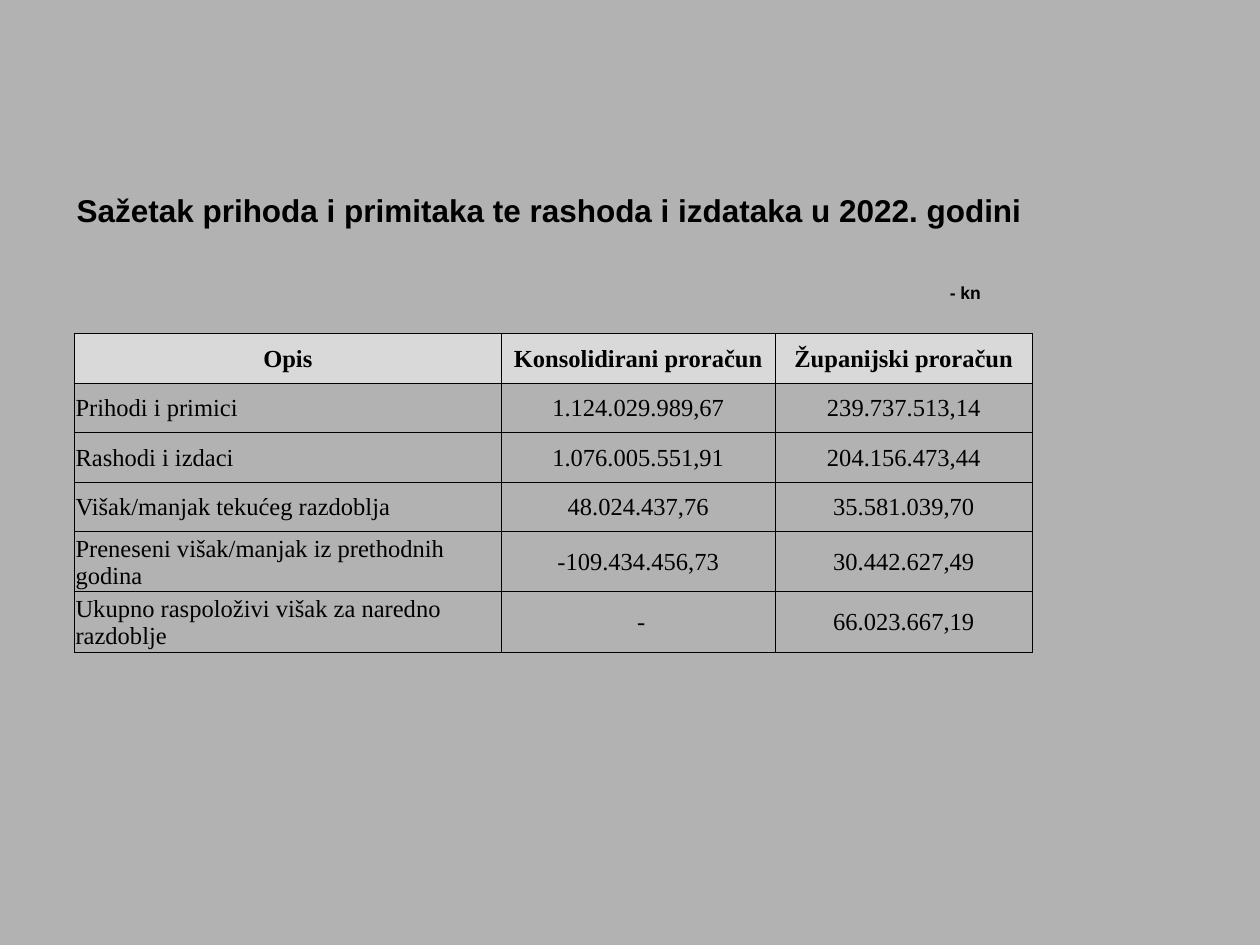
from lxml import etree
from pptx import Presentation
from pptx.dml.color import RGBColor
from pptx.enum.text import MSO_ANCHOR, PP_ALIGN
from pptx.oxml.ns import qn
from pptx.util import Pt

GREY = RGBColor(0xB2, 0xB2, 0xB2)
HEADER_GREY = RGBColor(0xD9, 0xD9, 0xD9)
BLACK = RGBColor(0, 0, 0)

BUDGET_ROWS = [
    ("Opis", "Konsolidirani proračun", "Županijski proračun"),
    ("Prihodi i primici", "1.124.029.989,67", "239.737.513,14"),
    ("Rashodi i izdaci", "1.076.005.551,91", "204.156.473,44"),
    ("Višak/manjak tekućeg razdoblja", "48.024.437,76", "35.581.039,70"),
    ("Preneseni višak/manjak iz prethodnih godina", "-109.434.456,73", "30.442.627,49"),
    ("Ukupno raspoloživi višak za naredno razdoblje", "\N{NO-BREAK SPACE}-", "66.023.667,19"),
]
COLUMN_WIDTHS = [244, 156.5, 147]
ROW_HEIGHTS = [28.35] * 4 + [34.3] * 2
CELL_FORMAT = {
    "margin_left": Pt(0.7),
    "margin_right": Pt(0.7),
    "margin_top": Pt(0.7),
    "margin_bottom": 0,
    "vertical_anchor": MSO_ANCHOR.MIDDLE,
}


def write(paragraph, text, **font_format):
    run = paragraph.add_run()
    run.text = text
    run.font.color.rgb = BLACK
    for attribute, value in font_format.items():
        setattr(run.font, attribute, value)


def add_borders(cell):
    """Put a thin black line on all four sides, ahead of the cell's fill."""
    properties = cell._tc.get_or_add_tcPr()
    for position, side in enumerate(("lnL", "lnR", "lnT", "lnB")):
        line = etree.Element(qn(f"a:{side}"), w=str(Pt(0.5)))
        fill = etree.SubElement(line, qn("a:solidFill"))
        etree.SubElement(fill, qn("a:srgbClr"), val=str(BLACK))
        properties.insert(position, line)


presentation = Presentation()
presentation.slide_width = Pt(720)
presentation.slide_height = Pt(540)
slide = presentation.slides.add_slide(presentation.slide_layouts[6])
slide.background.fill.solid()
slide.background.fill.fore_color.rgb = GREY

# Heading and currency unit
for text, size, bounds in [
    ("Sažetak prihoda i primitaka te rashoda i izdataka u 2022. godini", 18,
     (36.7, 105.8, 623.5, 39.6)),
    ("- kn", 10, (535.7, 157.7, 68.4, 17.3)),
]:
    frame = slide.shapes.add_textbox(*map(Pt, bounds)).text_frame
    frame.word_wrap = True
    write(frame.paragraphs[0], text, name="Arial", size=Pt(size), bold=True)

# Budget summary
budget = slide.shapes.add_table(
    len(BUDGET_ROWS), len(COLUMN_WIDTHS), Pt(42.5), Pt(190.5),
    Pt(sum(COLUMN_WIDTHS)), Pt(sum(ROW_HEIGHTS))).table
budget.horz_banding = False
for column, width in zip(budget.columns, COLUMN_WIDTHS):
    column.width = Pt(width)
for row, height in zip(budget.rows, ROW_HEIGHTS):
    row.height = Pt(height)

for row_index, texts in enumerate(BUDGET_ROWS):
    is_header = row_index == 0
    for column_index, text in enumerate(texts):
        cell = budget.cell(row_index, column_index)
        for attribute, value in CELL_FORMAT.items():
            setattr(cell, attribute, value)
        if is_header:
            cell.fill.solid()
            cell.fill.fore_color.rgb = HEADER_GREY
        else:
            cell.fill.background()
        add_borders(cell)
        paragraph = cell.text_frame.paragraphs[0]
        is_label = column_index == 0 and not is_header
        paragraph.alignment = PP_ALIGN.LEFT if is_label else PP_ALIGN.CENTER
        write(paragraph, text, name="Times New Roman", size=Pt(14), bold=is_header)

presentation.save("out.pptx")
